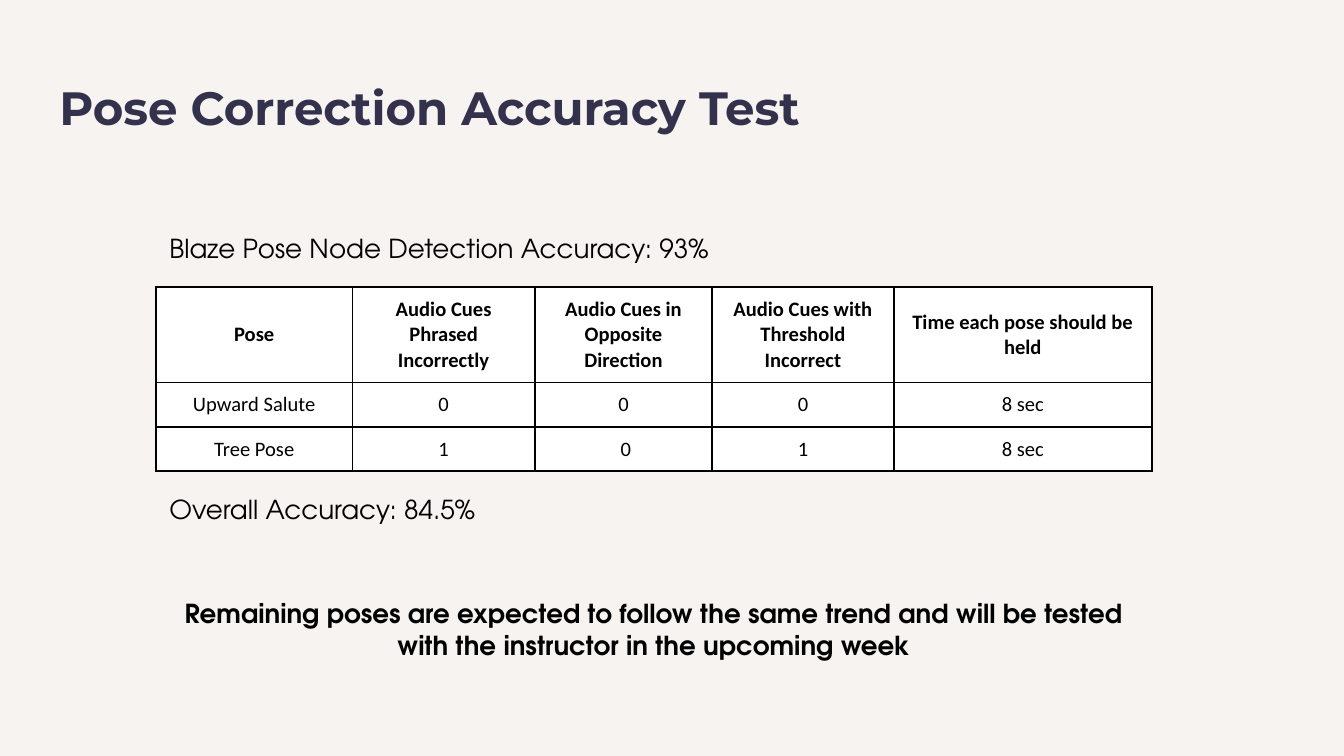
from pptx import Presentation
from pptx.dml.color import RGBColor
from pptx.enum.text import MSO_ANCHOR as Anchor, PP_ALIGN as Align
from pptx.oxml import parse_xml
from pptx.oxml.ns import nsdecls
from pptx.util import Cm, Pt

# Content
TITLE = "Pose Correction Accuracy Test"
RESULTS = [
    ["Pose", "Audio Cues Phrased Incorrectly", "Audio Cues in Opposite Direction",
     "Audio Cues with Threshold Incorrect", "Time each pose should be held"],
    ["Upward Salute", "0", "0", "0", "8 sec"],
    ["Tree Pose", "1", " 0", "1", "8 sec"],
]
# text, top, height, alignment, bold
STATEMENTS = [
    ("Blaze Pose Node Detection Accuracy: 93%", 4.14, 1.12, Align.LEFT, False),
    ("Overall Accuracy: 84.5%", 9.07, 1.12, Align.LEFT, False),
    ("Remaining poses are expected to follow the same trend and will be tested "
     "with the instructor in the upcoming week", 11.05, 1.7, Align.CENTER, True),
]

# Layout in centimetres
LEFT, TABLE_TOP = 2.95, 5.43
COLUMNS = [3.71, 3.45, 3.35, 3.43, 4.88]
ROWS = [1.77, 0.84, 0.84]
WIDTH = sum(COLUMNS)
TEXT_INSET, CELL_INSET = 0.25, 0.18

COLORS = {"background": "F7F3F0", "title": "33314B", "text": "000000",
          "cell": "FFFFFF", "border": "000000"}
HEADING_FONT, BODY_FONT, TABLE_FONT = "Montserrat", "TeX Gyre Adventor", "Calibri"


def color(name):
    return RGBColor.from_string(COLORS[name])


def write(frame, text, font, size, shade, bold, align):
    frame.text = text
    paragraph = frame.paragraphs[0]
    paragraph.alignment = align
    style = paragraph.runs[0].font
    style.name, style.size, style.bold = font, Pt(size), bold
    style.color.rgb = color(shade)


def set_insets(target, inset):
    target.margin_left = target.margin_right = Cm(inset)
    target.margin_top = target.margin_bottom = Cm(inset)


def add_borders(cell):
    properties = cell._tc.get_or_add_tcPr()
    for index, side in enumerate(("lnL", "lnR", "lnT", "lnB")):
        properties.insert(index, parse_xml(
            f'<a:{side} {nsdecls("a")} w="{Pt(1)}"><a:solidFill>'
            f'<a:srgbClr val="{COLORS["border"]}"/></a:solidFill></a:{side}>'))


deck = Presentation()
deck.slide_width, deck.slide_height = Cm(25.4), Cm(14.29)
slide = deck.slides.add_slide(deck.slide_layouts[5])
slide.background.fill.solid()
slide.background.fill.fore_color.rgb = color("background")

# Title
title = slide.shapes.title
title.left, title.top, title.width, title.height = Cm(0.87), Cm(1.24), Cm(23.66), Cm(1.6)
set_insets(title.text_frame, TEXT_INSET)
title.text_frame.vertical_anchor = Anchor.TOP
write(title.text_frame, TITLE, HEADING_FONT, 25, "title", True, Align.LEFT)

# Results table
results = slide.shapes.add_table(len(ROWS), len(COLUMNS), Cm(LEFT), Cm(TABLE_TOP),
                                 Cm(WIDTH), Cm(sum(ROWS))).table
for column, width in zip(results.columns, COLUMNS):
    column.width = Cm(width)
for r, (height, entries) in enumerate(zip(ROWS, RESULTS)):
    results.rows[r].height = Cm(height)
    for c, entry in enumerate(entries):
        cell = results.cell(r, c)
        set_insets(cell, CELL_INSET)
        cell.vertical_anchor = Anchor.MIDDLE
        cell.fill.solid()
        cell.fill.fore_color.rgb = color("cell")
        write(cell.text_frame, entry, TABLE_FONT, 11, "text", r == 0, Align.CENTER)
        add_borders(cell)

# Statements around the table
for statement, top, height, align, bold in STATEMENTS:
    frame = slide.shapes.add_textbox(Cm(LEFT), Cm(top), Cm(WIDTH), Cm(height)).text_frame
    frame.word_wrap = True
    set_insets(frame, TEXT_INSET)
    write(frame, statement, BODY_FONT, 14, "text", bold, align)

deck.save("out.pptx")
